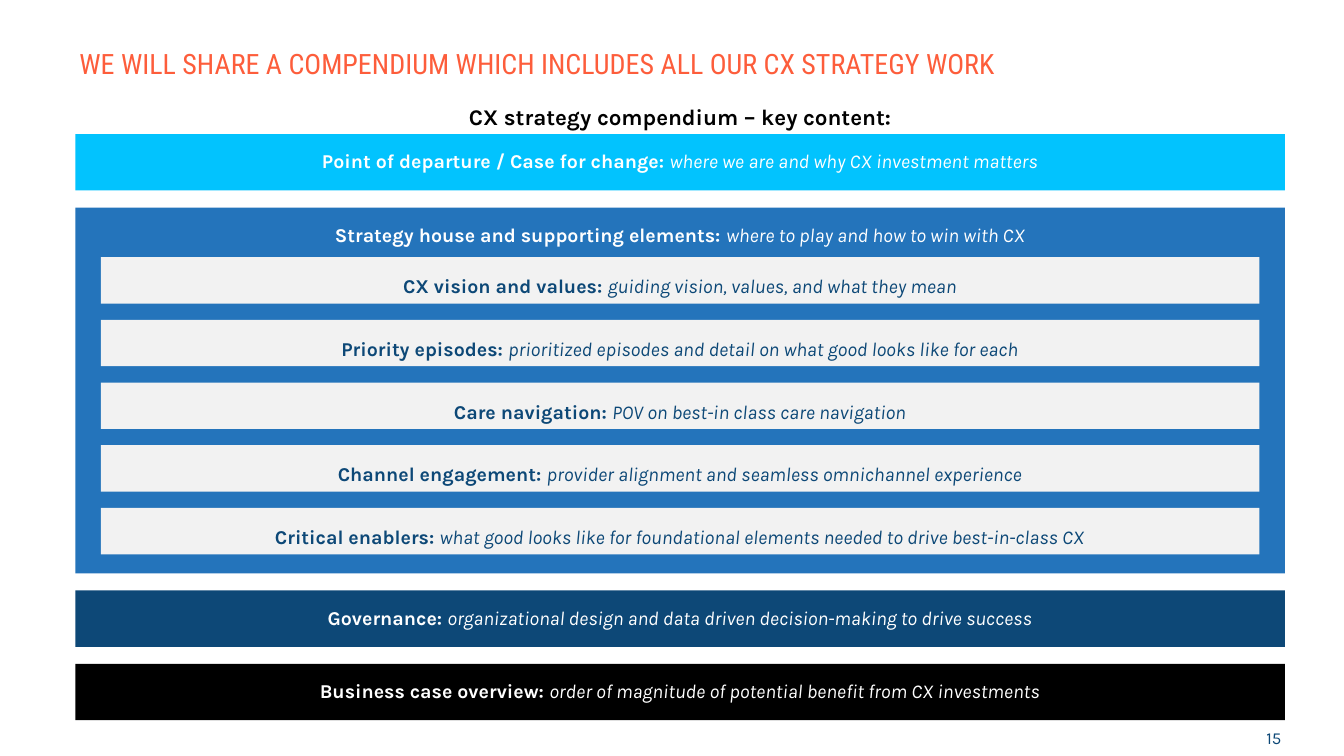
from pptx import Presentation
from pptx.util import Cm, Pt
from pptx.dml.color import RGBColor as RGB
from pptx.enum.shapes import MSO_SHAPE as Shape
from pptx.enum.text import PP_ALIGN as Align, MSO_ANCHOR as Anchor

HUES = {"coral": "FD5D3B", "sky": "02C3FE", "blue": "2474BB", "navy": "0D4877",
        "black": "000000", "white": "FFFFFF", "pale": "F2F2F2"}
LEFT, WIDE = 1.9, 30.48
BAND, HOUSE, GAP = 1.42, 9.22, 0.43
ROW, STEP = 1.17, 1.58
PAD, DROP = 0.1, 0.38

BANDS = [
    ("sky", BAND, "Point of departure / Case for change: ",
     "where we are and why CX investment matters"),
    ("blue", HOUSE, "Strategy house and supporting elements: ",
     "where to play and how to win with CX"),
    ("navy", BAND, "Governance: ",
     "organizational design and data driven decision-making to drive success"),
    ("black", BAND, "Business case overview: ",
     "order of magnitude of potential benefit from CX investments"),
]
ROWS = [
    ("CX vision and values: ", "guiding vision, values, and what they mean"),
    ("Priority episodes: ",
     "prioritized episodes and detail on what good looks like for each"),
    ("Care navigation: ", "POV on best-in class care navigation"),
    ("Channel engagement: ",
     "provider alignment and seamless omnichannel experience"),
    ("Critical enablers: ",
     "what good looks like for foundational elements needed to drive best-in-class CX"),
]


def style(shape, hue, size, face="Karla", align=Align.CENTER, anchor=Anchor.TOP, top=PAD):
    """Set the frame and the font of a shape with one paragraph."""
    frame = shape.text_frame
    frame.word_wrap = True
    frame.vertical_anchor = anchor
    frame.margin_left = frame.margin_right = frame.margin_bottom = Cm(PAD)
    frame.margin_top = Cm(top)
    para = frame.paragraphs[0]
    para.alignment = align
    para.font.name = face
    para.font.size = Pt(size)
    para.font.color.rgb = RGB.from_string(HUES[hue])
    return para


def label(slide, box, text, hue, size, bold=False, **look):
    """Add a text box holding one line."""
    shape = slide.shapes.add_textbox(*map(Cm, box))
    para = style(shape, hue, size, **look)
    para.font.bold = bold
    para.add_run().text = text


def bar(slide, box, fill, hue, lead, tail, anchor=Anchor.TOP):
    """Add a filled bar with a bold lead and an italic tail."""
    shape = slide.shapes.add_shape(Shape.RECTANGLE, *map(Cm, box))
    shape.shadow.inherit = False
    shape.fill.solid()
    shape.fill.fore_color.rgb = RGB.from_string(HUES[fill])
    shape.line.fill.background()
    para = style(shape, hue, 14, anchor=anchor, top=DROP)
    for text, bold in ((lead, True), (tail, False)):
        run = para.add_run()
        run.text = text
        run.font.bold = bold
        run.font.italic = not bold


def rows(slide, box):
    """Stack the pale rows inside the house."""
    left, top, wide, _ = box
    side = 0.64
    for i, (lead, tail) in enumerate(ROWS):
        spot = (left + side, top + 1.25 + i * STEP, wide - 2 * side, ROW)
        bar(slide, spot, "pale", "navy", lead, tail, Anchor.MIDDLE)


def stack(slide, left, top, wide):
    """Stack the bands with equal gaps and fill the house."""
    for fill, high, lead, tail in BANDS:
        box = (left, top, wide, high)
        bar(slide, box, fill, "white", lead, tail)
        if high == HOUSE:
            rows(slide, box)
        top += high + GAP


def main():
    """Build the slide and save it."""
    deck = Presentation()
    deck.slide_width, deck.slide_height = Cm(33.87), Cm(19.05)
    slide = deck.slides.add_slide(deck.slide_layouts[6])
    label(slide, (LEFT, 1.07, 24.56, 0.97),
          "WE WILL SHARE A COMPENDIUM WHICH INCLUDES ALL OUR CX STRATEGY WORK",
          "coral", 20, face="Roboto Condensed", align=Align.LEFT)
    label(slide, (LEFT, 1.96, WIDE, BAND), "CX strategy compendium – key content:",
          "black", 16, bold=True, anchor=Anchor.BOTTOM, top=DROP)
    stack(slide, LEFT, 3.38, WIDE)
    label(slide, (31.04, 18.24, 1.35, 0.71), "15", "navy", 12, align=Align.RIGHT)
    deck.save("out.pptx")


if __name__ == "__main__":
    main()
